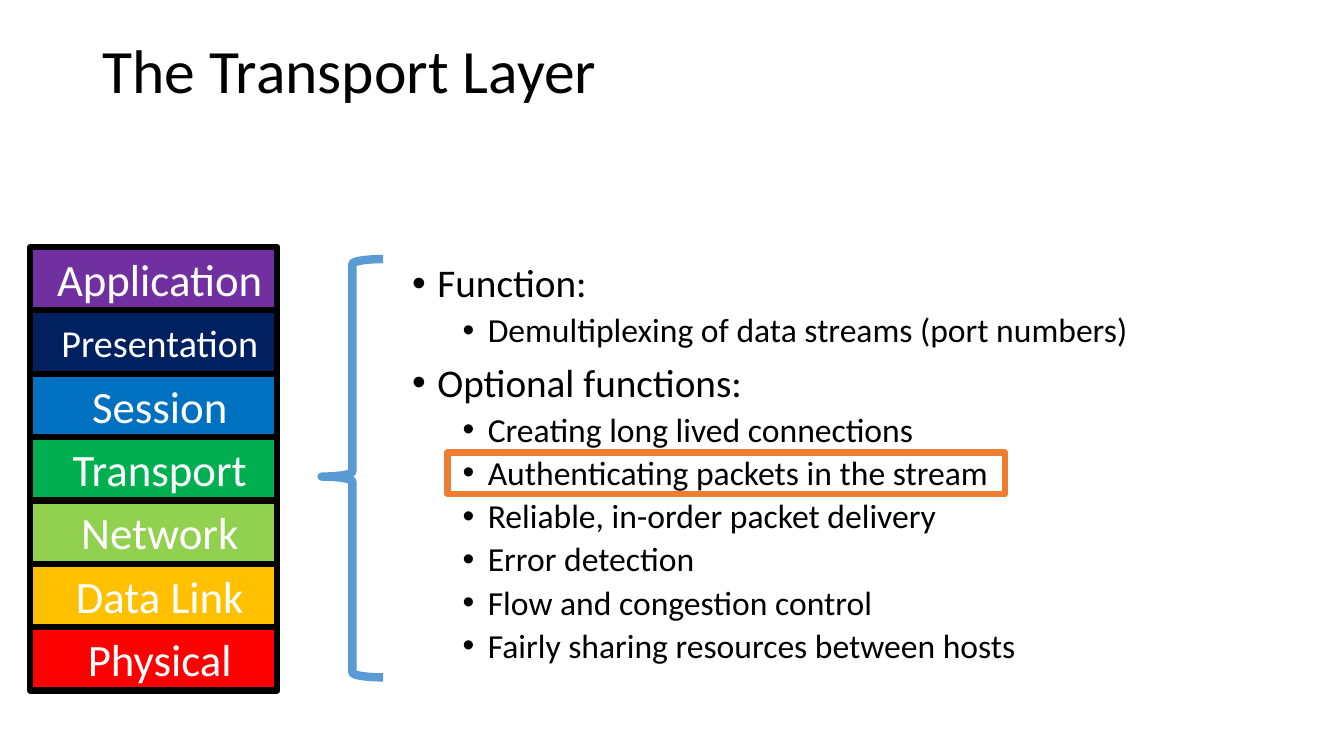
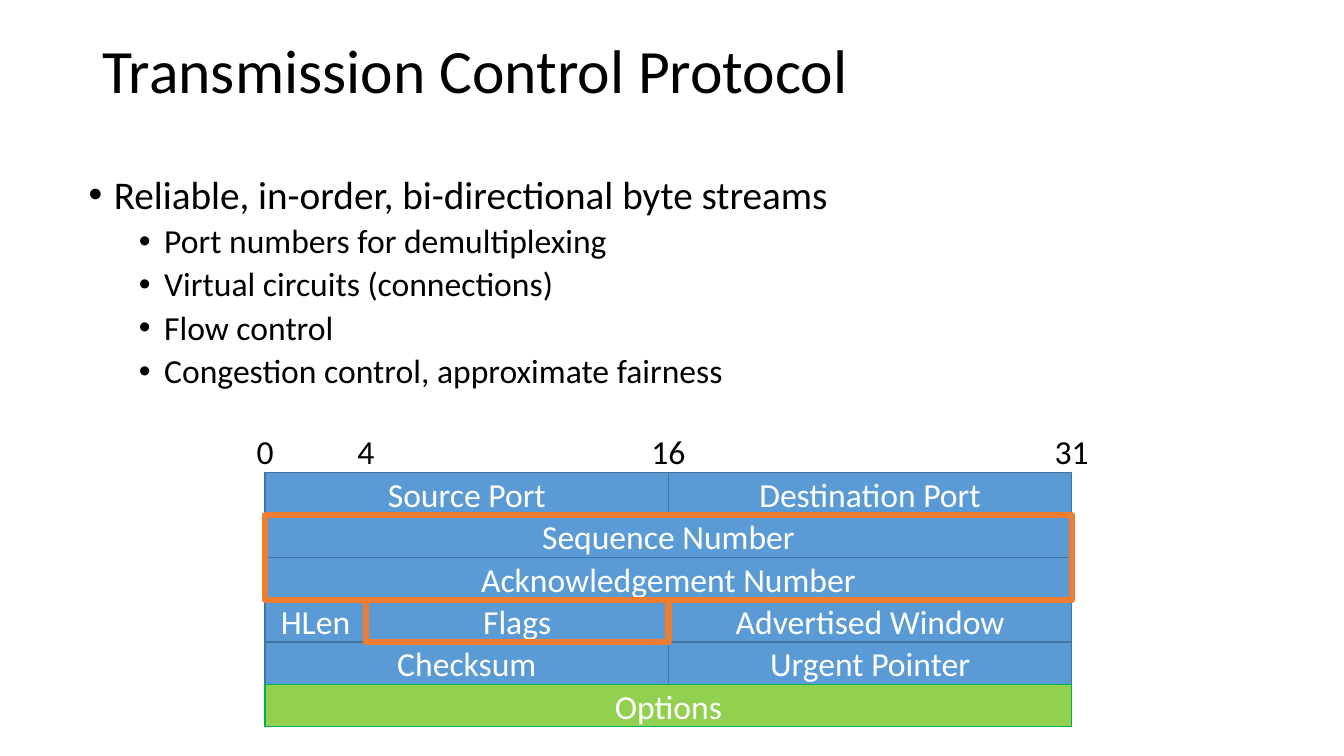
"""Build two slides on the transport layer and the TCP header."""
import pptx
import pptx.dml.color
import pptx.enum.shapes
import pptx.enum.text
import pptx.oxml.ns
import pptx.util
from lxml import etree

Inches = pptx.util.Inches
Pt = pptx.util.Pt
RGBColor = pptx.dml.color.RGBColor
Shape = pptx.enum.shapes.MSO_SHAPE
Align = pptx.enum.text.PP_ALIGN
Anchor = pptx.enum.text.MSO_ANCHOR
qn = pptx.oxml.ns.qn

BLACK = RGBColor(0x00, 0x00, 0x00)
WHITE = RGBColor(0xFF, 0xFF, 0xFF)
PURPLE = RGBColor(0x70, 0x30, 0xA0)
NAVY = RGBColor(0x00, 0x20, 0x60)
COBALT = RGBColor(0x00, 0x70, 0xC0)
GREEN = RGBColor(0x00, 0xB0, 0x50)
LIME = RGBColor(0x92, 0xD0, 0x50)
AMBER = RGBColor(0xFF, 0xC0, 0x00)
RED = RGBColor(0xFF, 0x00, 0x00)
BLUE = RGBColor(0x5B, 0x9B, 0xD5)
STEEL = RGBColor(0x43, 0x73, 0x9E)
ORANGE = RGBColor(0xED, 0x7D, 0x31)

FONT = "Calibri"
TITLE = (0.92, 0, 11.5, 1.45)
LEVELS = [
    {"size": 28, "indent": 0.25, "before": 10},
    {"size": 24, "indent": 0.75, "before": 5},
]

LAYERS = [
    ("Application", PURPLE, 32),
    ("Presentation", NAVY, 27.2),
    ("Session", COBALT, 32),
    ("Transport", GREEN, 32),
    ("Network", LIME, 32),
    ("Data Link", AMBER, 32),
    ("Physical", RED, 32),
]
DUTIES = [
    (0, "Function:"),
    (1, "Demultiplexing of data streams (port numbers)"),
    (0, "Optional functions:"),
    (1, "Creating long lived connections"),
    (1, "Authenticating packets in the stream"),
    (1, "Reliable, in-order packet delivery"),
    (1, "Error detection"),
    (1, "Flow and congestion control"),
    (1, "Fairly sharing resources between hosts"),
]
TRAITS = [
    (0, "Reliable, in-order, bi-directional byte streams"),
    (1, "Port numbers for demultiplexing"),
    (1, "Virtual circuits (connections)"),
    (1, "Flow control"),
    (1, "Congestion control, approximate fairness"),
]
FIELDS = [
    [("Source Port", 0, 16), ("Destination Port", 16, 32)],
    [("Sequence Number", 0, 32)],
    [("Acknowledgement Number", 0, 32)],
    [("HLen", 0, 4), ("Flags", 4, 16), ("Advertised Window", 16, 32)],
    [("Checksum", 0, 16), ("Urgent Pointer", 16, 32)],
    [("Options", 0, 32)],
]
TICKS = [("0", 0), ("4", 4), ("16", 16), ("31", 32)]
MARKS = [(1, 2, 0, 32), (3, 1, 4, 16)]

STACK = {"left": 0.3, "top": 2.45, "width": 2.45, "height": 4.4}
GRID = {"left": 2.63, "top": 4.69, "bit": 0.25, "row": 0.42}


def assign(item, values):
    """Set each named attribute of an item."""
    for name, value in values.items():
        setattr(item, name, value)


def write(para, text, size, color, **style):
    """Put one run of styled text in a paragraph."""
    assign(para, style)
    run = para.add_run()
    run.text = text
    assign(run.font, {"size": Pt(size), "name": FONT})
    run.font.color.rgb = color


def label(slide, area, anchor=Anchor.MIDDLE):
    """Add an empty wrapping text box and return its frame."""
    frame = slide.shapes.add_textbox(*map(Inches, area)).text_frame
    assign(frame, {"word_wrap": True, "vertical_anchor": anchor})
    return frame


def block(slide, area, fill, line, weight, kind=Shape.RECTANGLE):
    """Add a flat shape, left hollow when no fill is given."""
    shape = slide.shapes.add_shape(kind, *map(Inches, area))
    shape.shadow.inherit = False
    if fill is None:
        shape.fill.background()
    else:
        shape.fill.solid()
        shape.fill.fore_color.rgb = fill
    shape.line.color.rgb = line
    shape.line.width = Pt(weight)
    shape.text_frame.vertical_anchor = Anchor.MIDDLE
    return shape


def bullets(slide, area, items):
    """Add a two-level bullet list."""
    frame = label(slide, area, Anchor.TOP)
    for pos, (level, text) in enumerate(items):
        para = frame.add_paragraph() if pos else frame.paragraphs[0]
        look = LEVELS[level]
        write(para, text, look["size"], BLACK, level=level,
              line_spacing=0.9, space_before=Pt(look["before"]))
        props = para._p.get_or_add_pPr()
        props.set("marL", str(Inches(look["indent"])))
        props.set("indent", str(Inches(-0.25)))
        etree.SubElement(props, qn("a:buFont"), typeface="Arial")
        etree.SubElement(props, qn("a:buChar"), char="•")


def start(deck, title):
    """Add a blank slide with the shared title."""
    slide = deck.slides.add_slide(deck.slide_layouts[6])
    para = label(slide, TITLE).paragraphs[0]
    write(para, title, 44, BLACK, line_spacing=0.9)
    return slide


def layers(deck):
    """Build the layer stack and its list of functions."""
    slide = start(deck, "The Transport Layer")
    bullets(slide, (3.99, 2.57, 7.8, 4.15), DUTIES)
    step = STACK["height"] / len(LAYERS)
    for pos, (name, fill, size) in enumerate(LAYERS):
        area = (STACK["left"], STACK["top"] + pos * step, STACK["width"], step)
        para = block(slide, area, fill, BLACK, 4.5).text_frame.paragraphs[0]
        write(para, name, size, WHITE, alignment=Align.CENTER)
        para._p.get_or_add_pPr().set("marL", str(Inches(0.12)))
    brace = block(slide, (3.19, 2.57, 0.61, 4.15), None, BLUE, 6,
                  Shape.LEFT_BRACE)
    brace.adjustments[0] = 0.08
    brace.adjustments[1] = 0.52
    block(slide, (4.44, 4.49, 5.53, 0.41), None, ORANGE, 4.5)


def span(row, rows, first, last):
    """Return the area that header rows and bits cover."""
    return (GRID["left"] + first * GRID["bit"], GRID["top"] + row * GRID["row"],
            (last - first) * GRID["bit"], rows * GRID["row"])


def header(deck):
    """Build the TCP traits and the header diagram."""
    slide = start(deck, "Transmission Control Protocol")
    bullets(slide, (0.78, 1.69, 11.71, 2.73), TRAITS)
    for text, bit in TICKS:
        mid = GRID["left"] + bit * GRID["bit"]
        para = label(slide, (mid - 0.33, 4.15, 0.66, 0.66)).paragraphs[0]
        write(para, text, 24, BLACK, alignment=Align.CENTER)
    for row, cells in enumerate(FIELDS):
        extra = row == len(FIELDS) - 1
        fill, line = (LIME, GREEN) if extra else (BLUE, STEEL)
        for name, first, last in cells:
            cell = block(slide, span(row, 1, first, last), fill, line, 1)
            write(cell.text_frame.paragraphs[0], name, 24, WHITE,
                  alignment=Align.CENTER)
    for mark in MARKS:
        block(slide, span(*mark), None, ORANGE, 4.5)


def main():
    """Build and save the deck."""
    deck = pptx.Presentation()
    assign(deck, {"slide_width": Inches(13.33), "slide_height": Inches(7.5)})
    layers(deck)
    header(deck)
    deck.save("out.pptx")


if __name__ == "__main__":
    main()
